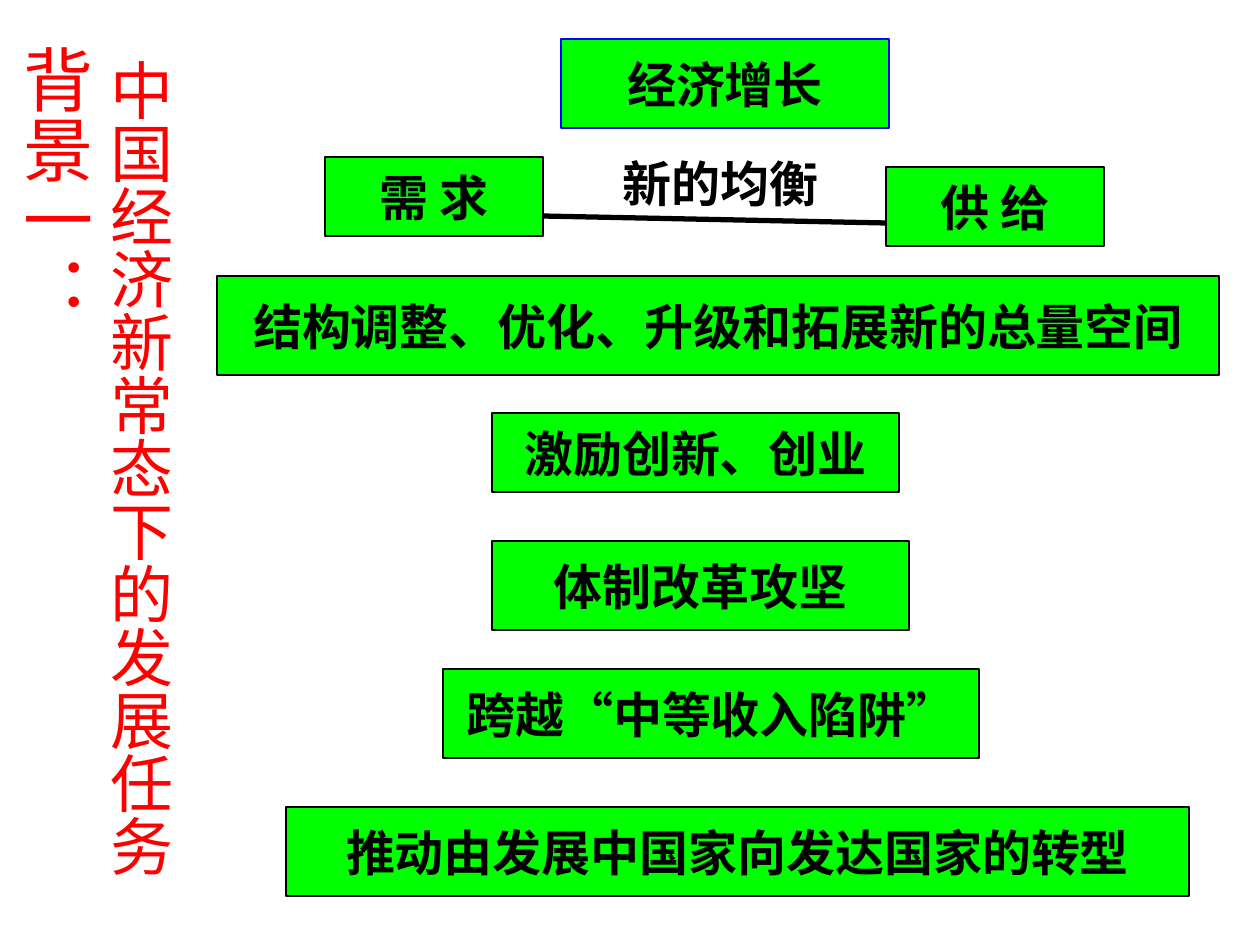
from lxml import etree
from pptx import Presentation
from pptx import util as u
from pptx.dml.color import RGBColor
from pptx.enum import shapes, text
from pptx.oxml.ns import qn

LATIN, HAN = "Arial", "Noto Sans CJK SC"
BLACK, GREEN, BLUE, RED = "000000", "00FF00", "0000FF", "FF0000"


def px(length):
    return u.Emu(round(length * 914400 / 126))


def color(value):
    return RGBColor.from_string(value)


class Slide:
    """Holds the text style and the page, and adds each kind of element."""

    def __init__(self, deck, size=28):
        self.size = size
        self.page = deck.slides.add_slide(deck.slide_layouts[5])

    def add_span(self, para, words, size=None, name=LATIN, ink=BLACK, bold=True):
        span = para.add_run()
        span.text = words
        font = span.font
        font.size, font.name, font.bold = u.Pt(size or self.size), name, bold
        font.color.rgb = color(ink)
        properties = font._element
        properties.set("lang", "zh-CN")
        east_asian = etree.Element(qn("a:ea"), typeface=HAN)
        properties.find(qn("a:latin")).addnext(east_asian)

    def title(self, left, top, width, height, columns):
        box = self.page.shapes.title
        box.left, box.top, box.width, box.height = map(px, (left, top, width, height))
        frame = box.text_frame
        frame.auto_size = text.MSO_AUTO_SIZE.NONE
        frame.vertical_anchor = text.MSO_ANCHOR.TOP
        frame._txBody.bodyPr.set("vert", "eaVert")
        for index, (words, size) in enumerate(columns):
            para = frame.add_paragraph() if index else frame.paragraphs[0]
            para.alignment = text.PP_ALIGN.LEFT
            self.add_span(para, words, size, HAN, RED, False)

    def block(self, left, top, width, height, *spans, line=BLACK):
        box = self.page.shapes.add_shape(
            shapes.MSO_SHAPE.RECTANGLE, *map(px, (left, top, width, height)))
        box.shadow.inherit = False
        box.fill.solid()
        box.fill.fore_color.rgb = color(GREEN)
        box.line.color.rgb = color(line)
        box.line.width = u.Pt(0.75)
        frame = box.text_frame
        frame.word_wrap = False
        frame.vertical_anchor = text.MSO_ANCHOR.MIDDLE
        para = frame.paragraphs[0]
        para.alignment = text.PP_ALIGN.CENTER
        for words in spans:
            self.add_span(para, words, name=HAN if words in "“”" else LATIN)

    def label(self, left, top, width, height, words):
        box = self.page.shapes.add_textbox(*map(px, (left, top, width, height)))
        frame = box.text_frame
        frame.word_wrap = True
        frame.auto_size = text.MSO_AUTO_SIZE.SHAPE_TO_FIT_TEXT
        self.add_span(frame.paragraphs[0], words)

    def link(self, *ends):
        line = self.page.shapes.add_connector(
            shapes.MSO_CONNECTOR.STRAIGHT, *map(px, ends))
        line.line.color.rgb = color(BLACK)
        line.line.width = u.Pt(3)
        etree.SubElement(line._element.spPr, qn("a:effectLst"))


def main():
    deck = Presentation()
    deck.slide_width, deck.slide_height = px(1260), px(945)
    slide = Slide(deck)
    slide.title(0, 39, 186, 906, [(" 中国经济新常态下的发展任务", 36), ("背景一：", 40)])
    slide.block(561, 39, 328, 89, "经济增长", line=BLUE)
    slide.block(886, 167, 218, 79, "供 给")
    slide.block(325, 157, 218, 79, "需 求")
    slide.block(217, 276, 1002, 99, "结构调整、优化、升级和拓展新的总量空间")
    slide.block(492, 413, 407, 79, "激励创新、创业")
    slide.block(492, 541, 417, 89, "体制改革攻坚")
    slide.block(443, 669, 536, 89, "跨越", "“", "中等收入陷阱", "”")
    slide.block(286, 807, 903, 89, "推动由发展中国家向发达国家的转型")
    slide.link(542, 216, 886, 223)
    slide.label(610, 147, 238, 72, "新的均衡")
    deck.save("out.pptx")


if __name__ == "__main__":
    main()
